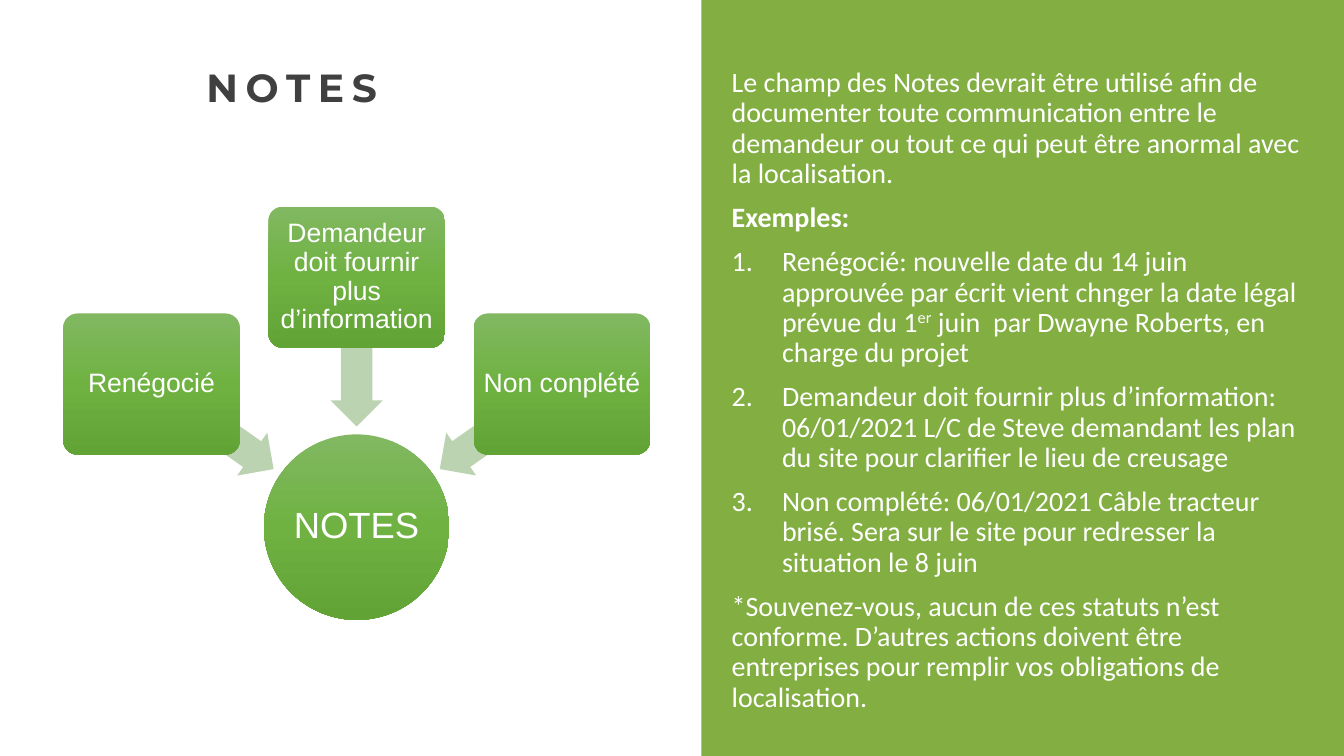
"""Build the slide on the Notes field and its three cases."""
from copy import deepcopy
from pptx import Presentation
from pptx.dml.color import RGBColor as RGB
from pptx.enum.shapes import MSO_SHAPE as SHAPE
from pptx.enum.text import MSO_ANCHOR as ANCHOR, PP_ALIGN as ALIGN
from pptx.oxml.ns import qn
from pptx.oxml.xmlchemy import OxmlElement as make
from pptx.util import Pt

WHITE = RGB(0xFF, 0xFF, 0xFF)
DARK = RGB(0x40, 0x40, 0x40)
GREEN = RGB(0x82, 0xAE, 0x42)
PALE = RGB(0xBB, 0xD3, 0xB1)
SHADES = [RGB(0x81, 0xB8, 0x61), RGB(0x6F, 0xB2, 0x42), RGB(0x62, 0xA3, 0x36)]

TITLE = HUB = "NOTES"
CASES = [
    ("Renégocié", 223.9, 285.8, 215),
    ("Demandeur doit fournir plus d’information", 147.6, 232.6, 270),
    ("Non conplété", 223.9, 285.8, 325),
]
BODY = [
    ("plain", ["Le champ des Notes devrait être utilisé afin de documenter toute "
               "communication entre le demandeur ou tout ce qui peut être anormal "
               "avec la localisation."]),
    ("bold", ["Exemples:"]),
    ("item", ["Renégocié: nouvelle date du 14 juin approuvée par écrit vient chnger "
              "la date légal prévue du 1", "er",
              " juin  par Dwayne Roberts, en charge du projet"]),
    ("item", ["Demandeur doit fournir plus d’information: 06/01/2021 L/C de Steve "
              "demandant les plan du site pour clarifier le lieu de creusage"]),
    ("item", ["Non complété: 06/01/2021 Câble tracteur brisé. Sera sur le site pour "
              "redresser la situation le 8 juin"]),
    ("plain", ["*Souvenez-vous, aucun de ces statuts n’est conforme. D’autres actions "
               "doivent être entreprises pour remplir vos obligations de localisation."]),
]

AXIS = 254.8
BOX_W, BOX_H, BOX_STEP = 126, 100.8, 146.6
ARROW_W, ARROW_H, ARROW_STEP = 106.6, 37.4, 103
HUB_TOP, HUB_SIZE = 310.3, 132.5


def style(run, font, size, color, bold=False):
    run.font.name, run.font.size, run.font.bold = font, Pt(size), bold
    run.font.color.rgb = color


def add_form(slide, kind, left, top, width, height, color=None):
    form = slide.shapes.add_shape(kind, Pt(left), Pt(top), Pt(width), Pt(height))
    form.shadow.inherit = False
    form.line.fill.background()
    if color:
        form.fill.solid()
        form.fill.fore_color.rgb = color
        return form
    form.fill.gradient()
    form.fill.gradient_angle = 270
    stops = form._element.spPr.find(qn("a:gradFill")).find(qn("a:gsLst"))
    stops.append(deepcopy(stops[0]))
    for stop, place, shade in zip(form.fill.gradient_stops, (0, 0.5, 1), SHADES):
        stop.position = place
        stop.color.rgb = shade
    return form


def label(form, text, size, inset):
    frame = form.text_frame
    frame.text = text
    frame.word_wrap = True
    frame.vertical_anchor = ANCHOR.MIDDLE
    frame.margin_left = frame.margin_right = Pt(inset)
    frame.margin_top = frame.margin_bottom = Pt(inset)
    para = frame.paragraphs[0]
    para.alignment, para.line_spacing = ALIGN.CENTER, 0.9
    style(para.runs[0], "Arial", size, WHITE)


def add_text(slide, left, top, width, height):
    box = slide.shapes.add_textbox(Pt(left), Pt(top), Pt(width), Pt(height))
    box.text_frame.word_wrap = True
    return box.text_frame


def number(para):
    props = para._p.get_or_add_pPr()
    props.set("marL", str(Pt(36)))
    props.set("indent", str(-Pt(36)))
    mark = make("a:buAutoNum")
    mark.set("type", "arabicPeriod")
    props.append(mark)


def add_hub(slide):
    hub = add_form(slide, SHAPE.OVAL, AXIS - HUB_SIZE / 2, HUB_TOP, HUB_SIZE, HUB_SIZE)
    label(hub, HUB, 26, 1.4)
    for col, (text, top, tip_top, turn) in enumerate(CASES, -1):
        arrow = add_form(slide, SHAPE.LEFT_ARROW, AXIS + col * ARROW_STEP - ARROW_W / 2,
                         tip_top, ARROW_W, ARROW_H, PALE)
        arrow.adjustments[0], arrow.adjustments[1] = 0.6, 0.5
        arrow.rotation = turn
        box = add_form(slide, SHAPE.ROUNDED_RECTANGLE, AXIS + col * BOX_STEP - BOX_W / 2,
                       top, BOX_W, BOX_H)
        box.adjustments[0] = 0.1
        label(box, text, 19, 2.9)


def add_body(slide):
    frame = add_text(slide, 515.5, 45.4, 428.4, 490)
    for row, (kind, parts) in enumerate(BODY):
        para = frame.add_paragraph() if row else frame.paragraphs[0]
        para.line_spacing = 0.9
        if row:
            para.space_before = Pt(10)
        if kind == "item":
            number(para)
        for part in parts:
            run = para.add_run()
            run.text = part
            style(run, "Calibri", 20, WHITE, kind == "bold")
            if part == "er":
                run.font._element.set("baseline", "30000")


def add_title(slide):
    para = add_text(slide, 140.4, 45.4, 340, 60).paragraphs[0]
    para.text = TITLE
    para.line_spacing = 0.9
    style(para.runs[0], "Montserrat", 28, DARK, True)
    para.runs[0].font._element.set("spc", "550")


def main():
    deck = Presentation()
    deck.slide_width, deck.slide_height = Pt(960), Pt(540)
    slide = deck.slides.add_slide(deck.slide_layouts[6])
    add_form(slide, SHAPE.RECTANGLE, 501, 0, 459, 540, GREEN)
    add_body(slide)
    add_hub(slide)
    add_title(slide)
    deck.save("out.pptx")


if __name__ == "__main__":
    main()
